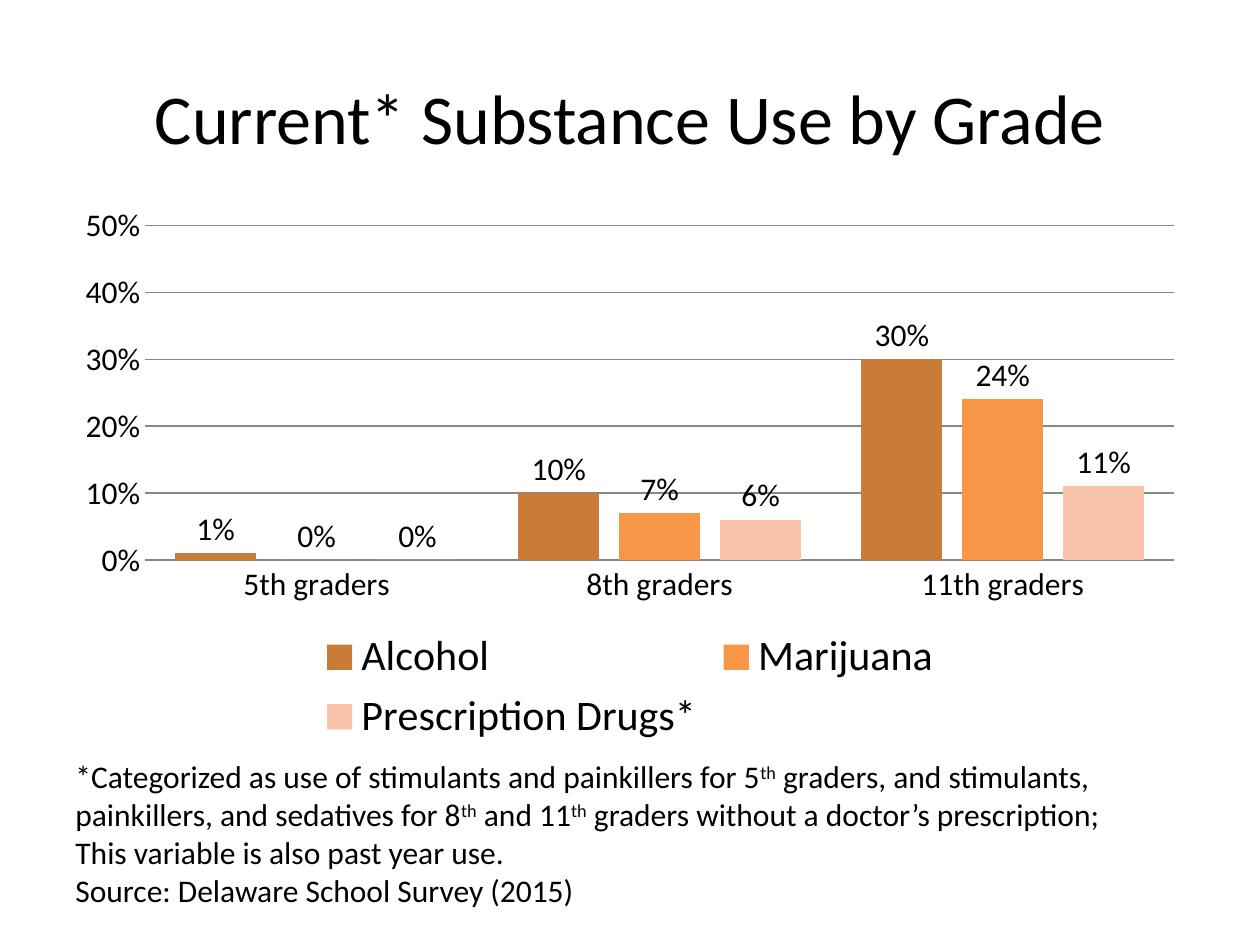
from pptx import Presentation
from pptx.chart.data import CategoryChartData
from pptx.dml.color import RGBColor
from pptx.enum.chart import XL_CHART_TYPE, XL_LABEL_POSITION, XL_LEGEND_POSITION, XL_TICK_MARK
from pptx.enum.text import MSO_ANCHOR, MSO_AUTO_SIZE, PP_ALIGN
from pptx.util import Inches, Pt


def rgb(value):
    return RGBColor.from_string(value)


class SlideBuilder:
    """Holds the style and the current slide, and adds elements to it."""

    font = "Calibri"
    ink = "000000"
    grid = "878787"

    def __init__(self, prs):
        self.slide = prs.slides.add_slide(prs.slide_layouts[5])

    def style(self, font, size):
        font.name = self.font
        font.size = Pt(size)
        font.color.rgb = rgb(self.ink)

    def add_run(self, p, text, size, raised=False):
        r = p.add_run()
        r.text = text
        self.style(r.font, size)
        if raised:
            r.font._element.set("baseline", "30000")

    def title(self, text, box, size):
        sp = self.slide.shapes.title
        sp.left, sp.top, sp.width, sp.height = map(Inches, box)
        tf = sp.text_frame
        tf.vertical_anchor = MSO_ANCHOR.MIDDLE
        p = tf.paragraphs[0]
        p.alignment = PP_ALIGN.CENTER
        self.add_run(p, text, size)

    def text(self, paragraphs, box, size):
        tf = self.slide.shapes.add_textbox(*map(Inches, box)).text_frame
        tf.word_wrap = True
        tf.auto_size = MSO_AUTO_SIZE.SHAPE_TO_FIT_TEXT
        for i, runs in enumerate(paragraphs):
            p = tf.add_paragraph() if i else tf.paragraphs[0]
            for text in runs:
                self.add_run(p, text, size, raised=text == "th")

    def column_chart(self, categories, series, box, size, legend_size):
        data = CategoryChartData(number_format="0%")
        data.categories = categories
        for name, values, _ in series:
            data.add_series(name, values)
        chart = self.slide.shapes.add_chart(
            XL_CHART_TYPE.COLUMN_CLUSTERED, *map(Inches, box), data).chart
        self.style(chart.font, size)
        chart.has_title = False
        chart.has_legend = True
        chart.legend.position = XL_LEGEND_POSITION.BOTTOM
        chart.legend.include_in_layout = False
        self.style(chart.legend.font, legend_size)

        cat, val = chart.category_axis, chart.value_axis
        for axis in (cat, val):
            axis.major_tick_mark = axis.minor_tick_mark = XL_TICK_MARK.NONE
        cat.format.line.color.rgb = rgb(self.grid)
        val.minimum_scale, val.maximum_scale, val.major_unit = 0, 0.5, 0.1
        val.tick_labels.number_format = "0%"
        val.tick_labels.number_format_is_linked = False
        val.format.line.fill.background()
        val.major_gridlines.format.line.color.rgb = rgb(self.grid)

        plot = chart.plots[0]
        plot.gap_width, plot.overlap = 75, -25
        plot.vary_by_categories = False
        for ser, (_, _, color) in zip(plot.series, series):
            ser.format.fill.solid()
            ser.format.fill.fore_color.rgb = rgb(color)
            labels = ser.data_labels
            labels.show_value = True
            labels.number_format = "0%"
            labels.number_format_is_linked = False
            labels.position = XL_LABEL_POSITION.OUTSIDE_END
            self.style(labels.font, size)


def main():
    prs = Presentation()
    prs.slide_width, prs.slide_height = Inches(10), Inches(7.5)
    s = SlideBuilder(prs)
    s.title("Current* Substance Use by Grade", (0.5, 0.3, 9, 1.25), 40)
    s.text([
        ["*Categorized as use of stimulants and painkillers for 5", "th",
         " graders, and stimulants, painkillers, and sedatives for 8", "th",
         " and 11", "th",
         " graders without a doctor’s prescription; This variable is also past year use."],
        ["Source: Delaware School Survey (2015)"],
    ], (0.5, 5.96, 8.72, 1.31), 18)
    s.column_chart(
        ["5th graders", "8th graders", "11th graders"],
        [("Alcohol", (0.01, 0.1, 0.3), "CB7B38"),
         ("Marijuana", (0, 0.07, 0.24), "F79646"),
         ("Prescription Drugs*", (0, 0.06, 0.11), "F9C3A9")],
        (0.5, 1.55, 9, 4.41), 18, 24)
    prs.save("out.pptx")


if __name__ == "__main__":
    main()
